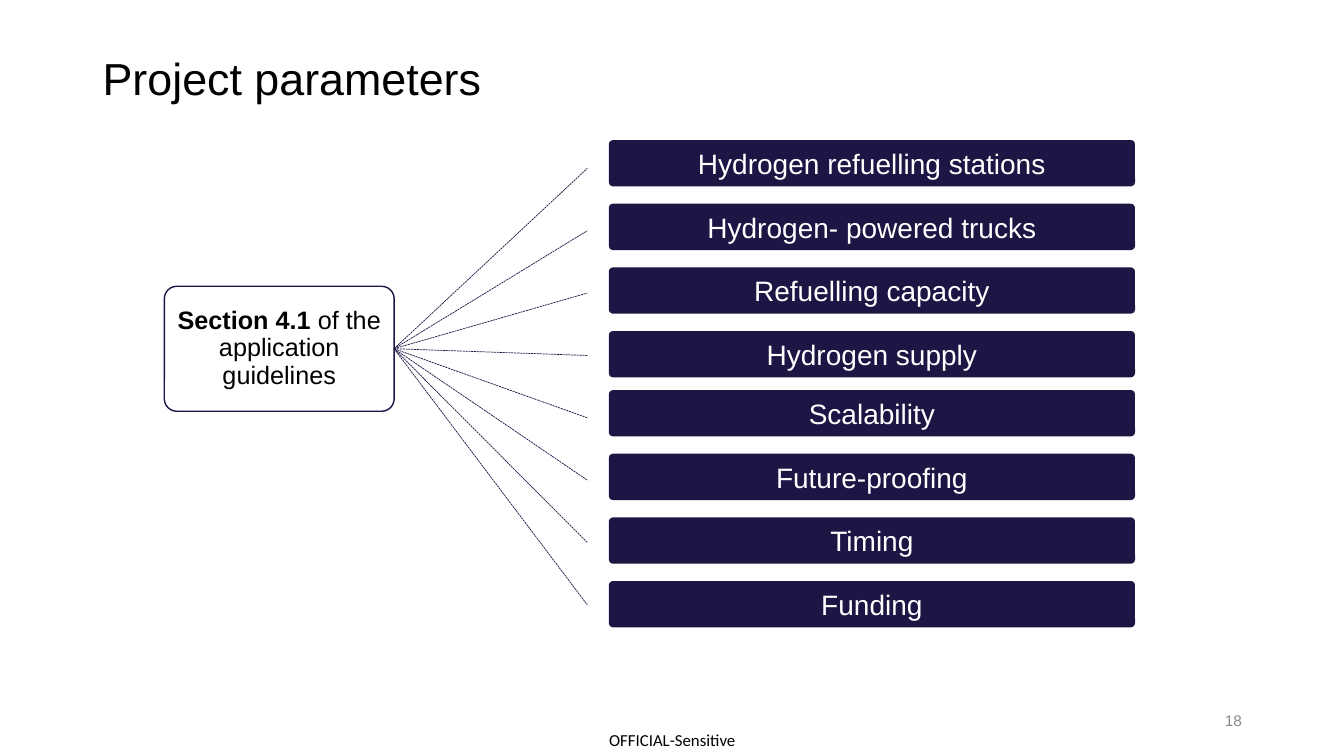
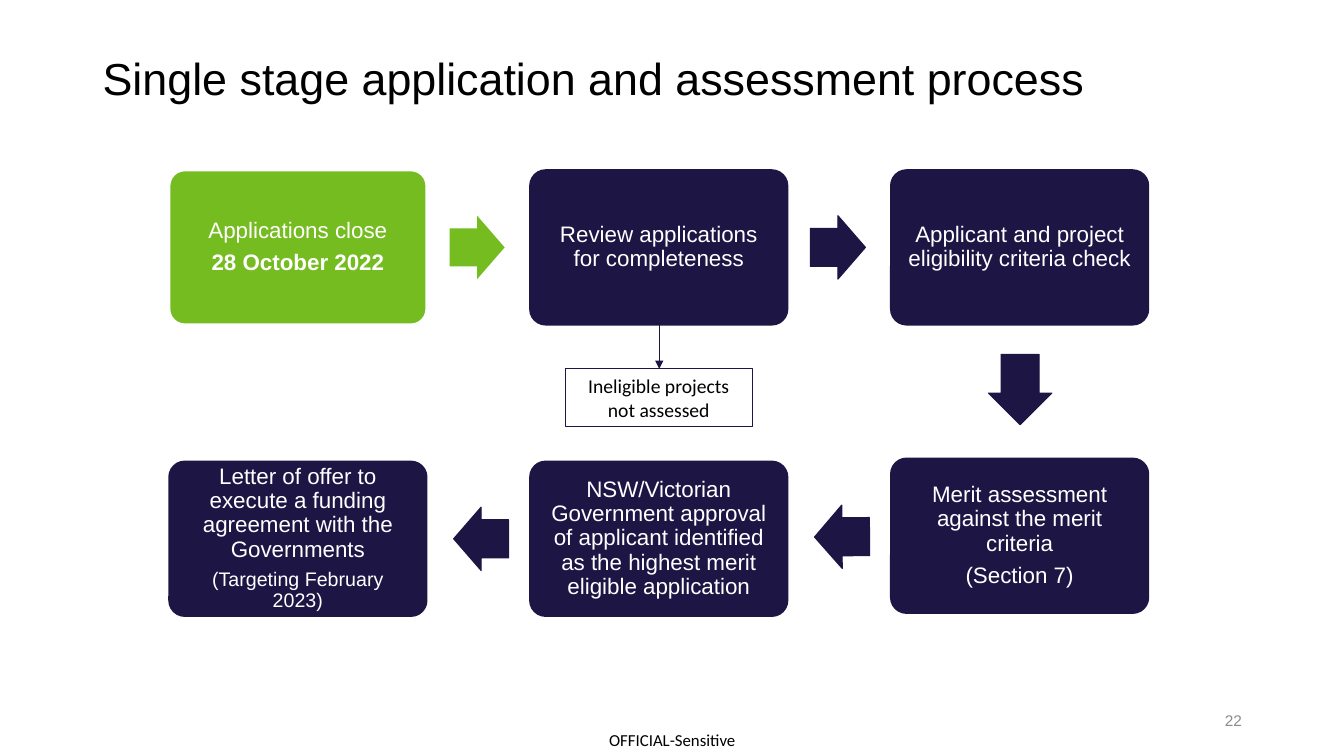
from lxml.etree import SubElement
from pptx import Presentation
from pptx.dml.color import RGBColor
from pptx.enum.dml import MSO_LINE
from pptx.enum.shapes import MSO_CONNECTOR, MSO_SHAPE
from pptx.enum.text import MSO_ANCHOR, PP_ALIGN
from pptx.oxml.ns import qn
from pptx.util import Inches, Pt

NAVY = RGBColor(0x1D, 0x16, 0x45)
GREEN = RGBColor(0x74, 0xBC, 0x1F)
GREY = RGBColor(0x8C, 0x8C, 0x8C)
BLACK = RGBColor(0, 0, 0)
WHITE = RGBColor(0xFF, 0xFF, 0xFF)

deck = Presentation()
deck.slide_width = Inches(13.33)
deck.slide_height = Inches(7.5)
COLUMN = deck.slide_width / 100
ROW = deck.slide_height / 100


def place(slide, kind, left, top, width, height, fill=None, line=None, weight=1, corner=None):
    area = [round(n) for n in (left * COLUMN, top * ROW, width * COLUMN, height * ROW)]
    if kind is None:
        return slide.shapes.add_textbox(*area)
    shape = slide.shapes.add_shape(kind, *area)
    shape.shadow.inherit = False
    for paint, color in ((shape.fill, fill), (shape.line.fill, line)):
        if color is None:
            paint.background()
        else:
            paint.solid()
            paint.fore_color.rgb = color
    if line is not None:
        shape.line.width = Pt(weight)
    if corner is not None:
        shape.adjustments[0] = corner
    return shape


def write(shape, *paragraphs, size=16, color=WHITE, font="Arial", align=PP_ALIGN.CENTER,
          spacing=1.0, after=0, inset=(0.1, 0.05)):
    frame = shape.text_frame
    frame.word_wrap = True
    frame.vertical_anchor = MSO_ANCHOR.MIDDLE
    frame.margin_left = frame.margin_right = Inches(inset[0])
    frame.margin_top = frame.margin_bottom = Inches(inset[1])
    for index, runs in enumerate(paragraphs):
        paragraph = frame.add_paragraph() if index else frame.paragraphs[0]
        paragraph.alignment = align
        paragraph.line_spacing = spacing
        paragraph.space_after = Pt(after)
        for words, changes in [(runs, {})] if isinstance(runs, str) else runs:
            run = paragraph.add_run()
            run.text = words
            run.font.name = font
            run.font.size = Pt(changes.get("size", size))
            run.font.bold = changes.get("bold", False)
            run.font.color.rgb = color


slides = []
for heading, number in (("Project parameters", "18"),
                        ("Single stage application and assessment process", "22")):
    slide = deck.slides.add_slide(deck.slide_layouts[6])
    slides.append(slide)
    write(place(slide, None, 43.95, 95.73, 12.15, 4.27), "OFFICIAL-Sensitive",
          size=12, color=BLACK, font="Calibri", inset=(0, 0))
    write(place(slide, None, 6.9, 5.33, 86.25, 10.8), heading,
          size=32, color=BLACK, align=PP_ALIGN.LEFT, spacing=0.9)
    write(place(slide, None, 70.65, 92.67, 22.5, 5.33), number,
          size=11, color=GREY, align=PP_ALIGN.RIGHT)
parameters, process = slides

PARAMETER_GROUPS = (
    (18.53, ("Hydrogen refuelling stations", "Hydrogen- powered trucks",
             "Refuelling capacity", "Hydrogen supply")),
    (51.6, ("Scalability", "Future-proofing", "Timing", "Funding")),
)
for group_top, labels in PARAMETER_GROUPS:
    for index, label in enumerate(labels):
        bar = place(parameters, MSO_SHAPE.ROUNDED_RECTANGLE, 45.3, group_top + 8.42 * index,
                    39.15, 6.13, fill=NAVY, corner=0.09)
        write(bar, label, size=20)

section = place(parameters, MSO_SHAPE.ROUNDED_RECTANGLE, 12.23, 37.87, 17.1, 16.53,
                fill=WHITE, line=NAVY, corner=0.1)
write(section, [("Section 4.1 ", {"bold": True}), ("of the application guidelines", {})],
      size=18, color=BLACK, spacing=0.9, after=6.3, inset=(0.05, 0.04))

CARD_LEFT, CARD_PITCH = 12.6, 26.85
STEPS = (
    (0, 22.53, GREEN, WHITE, ["Applications close", [("28 October 2022", {"bold": True})]]),
    (1, 22.53, NAVY, NAVY, ["Review applications for completeness"]),
    (2, 22.53, NAVY, NAVY, ["Applicant and project eligibility criteria check"]),
    (2, 60.67, NAVY, NAVY, ["Merit assessment against the merit criteria", "(Section 7)"]),
    (1, 61.07, NAVY, NAVY, ["NSW/Victorian Government approval of applicant identified "
                            "as the highest merit eligible application"]),
    (0, 61.07, NAVY, NAVY, ["Letter of offer to execute a funding agreement with the Governments",
                            [("(Targeting February 2023)", {"size": 14})]]),
)
for column, top, fill, border, wording in STEPS:
    card = place(process, MSO_SHAPE.ROUNDED_RECTANGLE, CARD_LEFT + CARD_PITCH * column, top,
                 19.13, 20.4, fill=fill, line=border, weight=1.5, corner=0.1)
    write(card, *wording, spacing=0.9, after=5.6, inset=(0.11, 0.11))

ARROWS = (
    (33.45, 28.53, 4.1, 0, GREEN, None),
    (60.3, 28.53, 4.1, 0, NAVY, NAVY),
    (73.28, 47.33, 5.25, 90, NAVY, NAVY),
    (60.6, 66.8, 4.1, 179.5, NAVY, NAVY),
    (33.75, 67.07, 4.1, 180, NAVY, NAVY),
)
for left, top, width, turn, fill, border in ARROWS:
    arrow = place(process, MSO_SHAPE.RIGHT_ARROW, left, top, width, 8.4,
                  fill=fill, line=border, weight=0.75)
    arrow.adjustments[0] = 0.6
    arrow.adjustments[1] = 0.5
    arrow.rotation = turn

ineligible = place(process, MSO_SHAPE.RECTANGLE, 42.08, 48.8, 13.88, 7.6, line=NAVY, weight=0.75)
write(ineligible, "Ineligible projects not assessed", size=14, color=BLACK, font="Calibri")

links = [(parameters, 29.32, 46.13, 43.7, 22.27 + 8.25 * index) for index in range(8)]
links.append((process, 49.05, 42.67, 49.05, 48.8))
for slide, start_x, start_y, end_x, end_y in links:
    link = slide.shapes.add_connector(
        MSO_CONNECTOR.STRAIGHT, round(start_x * COLUMN), round(start_y * ROW),
        round(end_x * COLUMN), round(end_y * ROW))
    link.line.color.rgb = NAVY
    link.line.width = Pt(0.5)
    if slide is parameters:
        link.line.dash_style = MSO_LINE.SQUARE_DOT
    else:
        SubElement(link.line._get_or_add_ln(), qn("a:tailEnd"), type="triangle")
    SubElement(link._element.spPr, qn("a:effectLst"))

deck.save("out.pptx")
